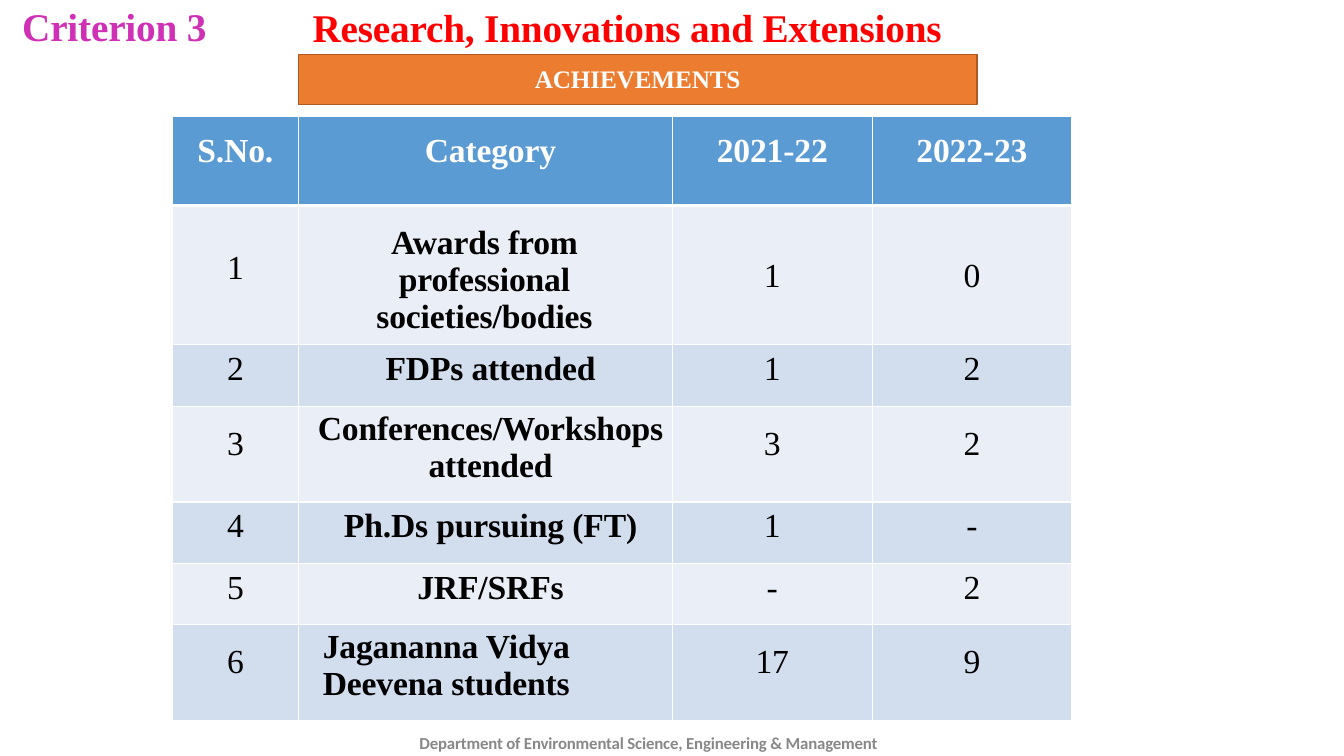
from lxml import etree
from pptx import Presentation
from pptx.dml.color import RGBColor
from pptx.enum import shapes, text
from pptx.oxml import ns
from pptx.util import Inches, Pt

WHITE = RGBColor(0xFF, 0xFF, 0xFF)
BLACK = RGBColor(0, 0, 0)
RED = RGBColor(0xFF, 0, 0)
MAGENTA = RGBColor(0xCF, 0x30, 0xB5)
GRAY = RGBColor(0x88, 0x88, 0x88)
ORANGE = RGBColor(0xEC, 0x7C, 0x30)
BROWN = RGBColor(0xAD, 0x5A, 0x20)
BLUE = RGBColor(0x5B, 0x9B, 0xD4)
PALE = RGBColor(0xEA, 0xEE, 0xF7)
LIGHT = RGBColor(0xD2, 0xDE, 0xEE)
SERIF = "Times New Roman"
LEFT, CENTER, RIGHT = text.PP_ALIGN.LEFT, text.PP_ALIGN.CENTER, text.PP_ALIGN.RIGHT


def write(frame, words, size, color, bold=True, align=LEFT, name=SERIF):
    frame.word_wrap = True
    frame.text = words
    for para in frame.paragraphs:
        para.alignment = align
        para.space_before = Pt(0)
        para.font.name = name
        para.font.size = Pt(size)
        para.font.bold = bold
        para.font.color.rgb = color
        for span in para.runs:
            span._r.get_or_add_rPr().set("spc", "-10")


def set_insets(holder, left, top, right):
    holder.margin_left = Inches(left)
    holder.margin_top = Inches(top)
    holder.margin_right = Inches(right)
    holder.margin_bottom = 0


deck = Presentation()
deck.slide_width, deck.slide_height = Inches(13.33), Inches(7.5)
page = deck.slides.add_slide(deck.slide_layouts[5])

banner = page.shapes.add_shape(
    shapes.MSO_SHAPE.RECTANGLE, Inches(2.96), Inches(0.54), Inches(6.73), Inches(0.5))
banner.shadow.inherit = False
banner.fill.solid()
banner.fill.fore_color.rgb = ORANGE
banner.line.color.rgb = BROWN
banner.line.width = Pt(1)
set_insets(banner.text_frame, 0, 0.09, 0)
banner.text_frame.vertical_anchor = text.MSO_ANCHOR.TOP
write(banner.text_frame, "ACHIEVEMENTS", 18, WHITE, align=CENTER)

rows = [
    ("S.No.", "Category", "2021-22", "2022-23"),
    ("1", "Awards from professional societies/bodies", "1", "0"),
    ("2", "FDPs attended", "1", "2"),
    ("3", "Conferences/Workshops\nattended", "3", "2"),
    ("4", "Ph.Ds pursuing (FT)", "1", "-"),
    ("5", "JRF/SRFs", "-", "2"),
    ("6", "Jagananna Vidya Deevena students", "17", "9"),
]
heights = [0.89, 1.38, 0.61, 0.95, 0.61, 0.61, 0.95]
number_tops = [0.17, 0.44, 0.06, 0.19, 0.06, 0.06, 0.19]
category_tops = [0.17, 0.19, 0.06, 0.04, 0.06, 0.06, 0.04]
category_rights = {1: 0.12, 6: 1.02}
widths = [1.25, 3.71, 1.98, 1.98]

table = page.shapes.add_table(
    len(rows), len(widths), Inches(1.71), Inches(1.15),
    Inches(sum(widths)), Inches(sum(heights))).table
for column, width in zip(table.columns, widths):
    column.width = Inches(width)

for r, row in enumerate(rows):
    table.rows[r].height = Inches(heights[r])
    for c, words in enumerate(row):
        cell = table.cell(r, c)
        is_category = c == 1
        if is_category:
            set_insets(cell, 0.1, category_tops[r], category_rights.get(r, 0))
        else:
            set_insets(cell, 0, number_tops[r], 0)
        if r == 1 and c > 1:
            cell.margin_top = Inches(0.01)
            cell.vertical_anchor = text.MSO_ANCHOR.MIDDLE
        write(cell.text_frame, words, 24, WHITE if r == 0 else BLACK,
              bold=r == 0 or is_category,
              align=RIGHT if is_category and r == 6 else CENTER)
        for side in ("lnL", "lnR", "lnT", "lnB"):
            thick = (r, side) in ((0, "lnB"), (1, "lnT"))
            border = etree.SubElement(
                cell._tc.get_or_add_tcPr(), ns.qn("a:" + side), w=str(Pt(3 if thick else 1)))
            paint = etree.SubElement(border, ns.qn("a:solidFill"))
            etree.SubElement(paint, ns.qn("a:srgbClr"), val=str(WHITE))
        cell.fill.solid()
        cell.fill.fore_color.rgb = BLUE if r == 0 else PALE if r % 2 else LIGHT

heading = page.shapes.add_textbox(Inches(3.09), Inches(0.02), Inches(6.38), Inches(0.49))
set_insets(heading.text_frame, 0.01, 0.01, 0)
write(heading.text_frame, "Research, Innovations and Extensions", 28, RED)

title = page.shapes.title
title.left, title.top = Inches(0.21), Inches(0.01)
title.width, title.height = Inches(1.92), Inches(0.49)
set_insets(title.text_frame, 0.01, 0.01, 0)
title.text_frame.vertical_anchor = text.MSO_ANCHOR.TOP
title.text_frame.auto_size = text.MSO_AUTO_SIZE.NONE
write(title.text_frame, "Criterion 3", 28, MAGENTA)

department = page.shapes.add_textbox(Inches(4.15), Inches(7.26), Inches(5.46), Inches(0.22))
set_insets(department.text_frame, 0.01, 0.01, 0)
write(department.text_frame,
      "Department of Environmental Science, Engineering & Management",
      12, GRAY, name="Calibri")

deck.save("out.pptx")
